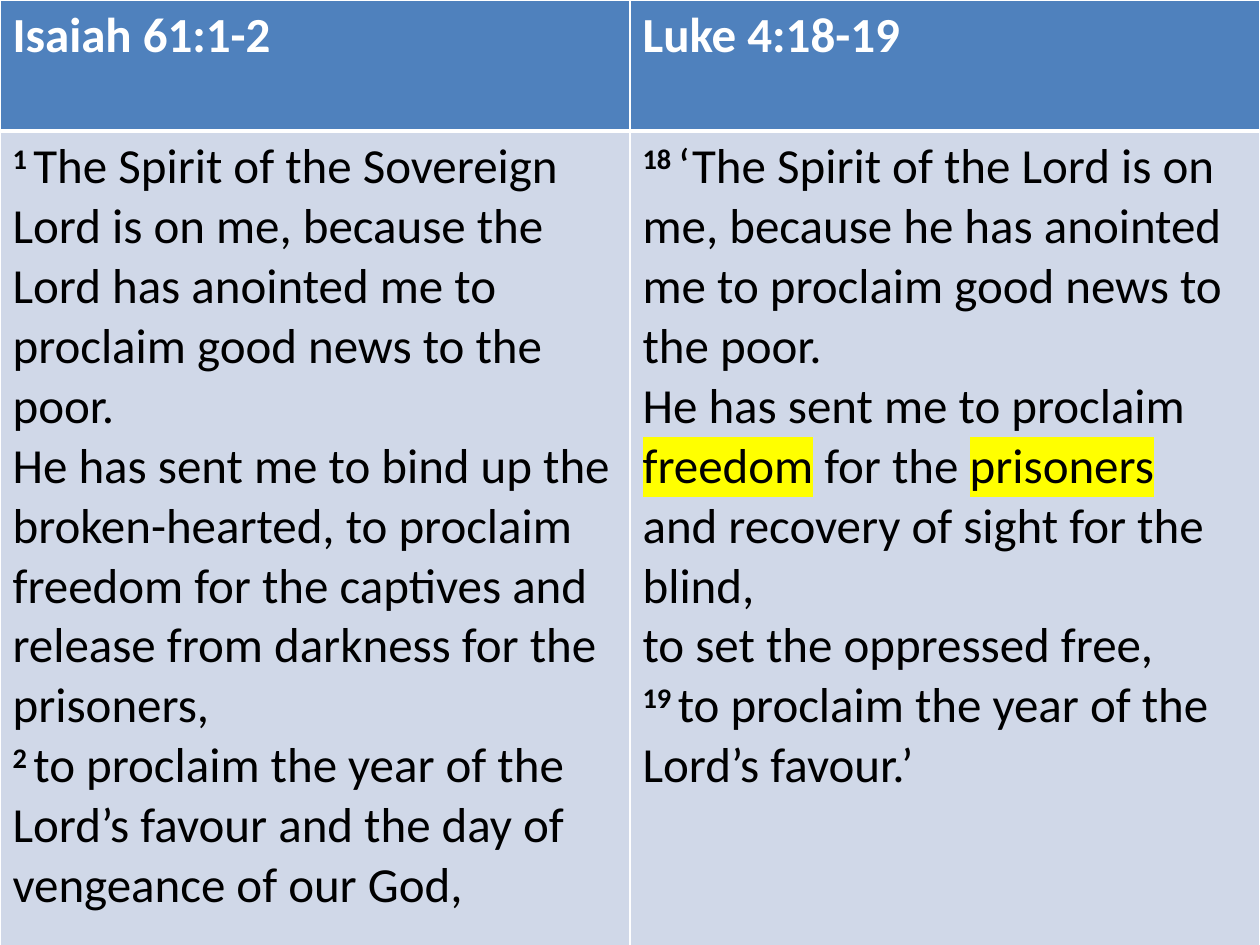
"""Build a slide that sets Isaiah 61:1-2 beside Luke 4:18-19 in a table."""
from lxml import etree
from pptx import Presentation
from pptx import util as u
from pptx.dml.color import RGBColor
from pptx.oxml import ns

COLORS = {"header": "4F81BD", "body": "D0D8E8", "line": "FFFFFF",
          "title": "FFFFFF", "text": "000000", "mark": "FFFF00"}
FONT, SIZE = "Calibri", 28
WIDTH, HEIGHT = 10, 7.5
ROW_HEIGHTS = [1.04, 6.63]
HEADER_BORDERS = {"L": 1, "R": 1, "T": 1, "B": 3}
BODY_BORDERS = {"L": 1, "R": 1, "T": 3, "B": 1}

PASSAGES = [
    ("Isaiah 61:1-2", [
        ("verse", "1 "),
        ("plain", "The Spirit of the Sovereign Lord is on me, because the Lord has "
                  "anointed me to proclaim good news to the poor.\n"
                  "He has sent me to bind up the broken-hearted, to proclaim freedom "
                  "for the captives and release from darkness for the prisoners, \n"),
        ("verse", "2 "),
        ("plain", "to proclaim the year of the Lord’s favour and the day of vengeance "
                  "of our God,"),
    ]),
    ("Luke 4:18-19", [
        ("verse", "18 "),
        ("plain", "‘The Spirit of the Lord is on me, because he has anointed me to "
                  "proclaim good news to the poor.\nHe has sent me to proclaim "),
        ("mark", "freedom"),
        ("plain", " for the "),
        ("mark", "prisoners\n"),
        ("plain", "and recovery of sight for the blind,\nto set the oppressed free,\n"),
        ("verse", "19 "),
        ("plain", "to proclaim the year of the Lord’s favour.’"),
    ]),
]


def add_color(parent, tag, color):
    holder = etree.SubElement(parent, ns.qn(tag))
    etree.SubElement(holder, ns.qn("a:srgbClr")).set("val", color)


def style_cell(cell, fill, borders):
    properties = cell._tc.get_or_add_tcPr()
    for side, points in borders.items():
        line = etree.SubElement(properties, ns.qn(f"a:ln{side}"))
        line.set("w", str(u.Pt(points)))
        add_color(line, "a:solidFill", COLORS["line"])
    cell.fill.solid()
    cell.fill.fore_color.rgb = RGBColor.from_string(COLORS[fill])


def add_run(paragraph, content, style):
    run = paragraph.add_run()
    run.text = content
    run.font.size = u.Pt(SIZE)
    run.font.bold = style in ("title", "verse")
    color = COLORS["title" if style == "title" else "text"]
    run.font.color.rgb = RGBColor.from_string(color)
    if style == "verse":
        run.font._element.set("baseline", "30000")
    if style == "mark":
        add_color(run.font._element, "a:highlight", COLORS["mark"])
    run.font.name = FONT


def write(cell, segments):
    paragraph = cell.text_frame.paragraphs[0]
    for style, content in segments:
        for index, line in enumerate(content.split("\n")):
            if index:
                paragraph.add_line_break()
            if line:
                add_run(paragraph, line, style)


def main():
    presentation = Presentation()
    presentation.slide_width, presentation.slide_height = u.Inches(WIDTH), u.Inches(HEIGHT)
    slide = presentation.slides.add_slide(presentation.slide_layouts[6])
    table = slide.shapes.add_table(len(ROW_HEIGHTS), len(PASSAGES), 0, 0, u.Inches(WIDTH),
                                   u.Inches(sum(ROW_HEIGHTS))).table
    for row, height in zip(table.rows, ROW_HEIGHTS):
        row.height = u.Inches(height)
    for column, (title, segments) in enumerate(PASSAGES):
        header, body = table.cell(0, column), table.cell(1, column)
        style_cell(header, "header", HEADER_BORDERS)
        style_cell(body, "body", BODY_BORDERS)
        write(header, [("title", title)])
        write(body, segments)
    presentation.save("out.pptx")


if __name__ == "__main__":
    main()
